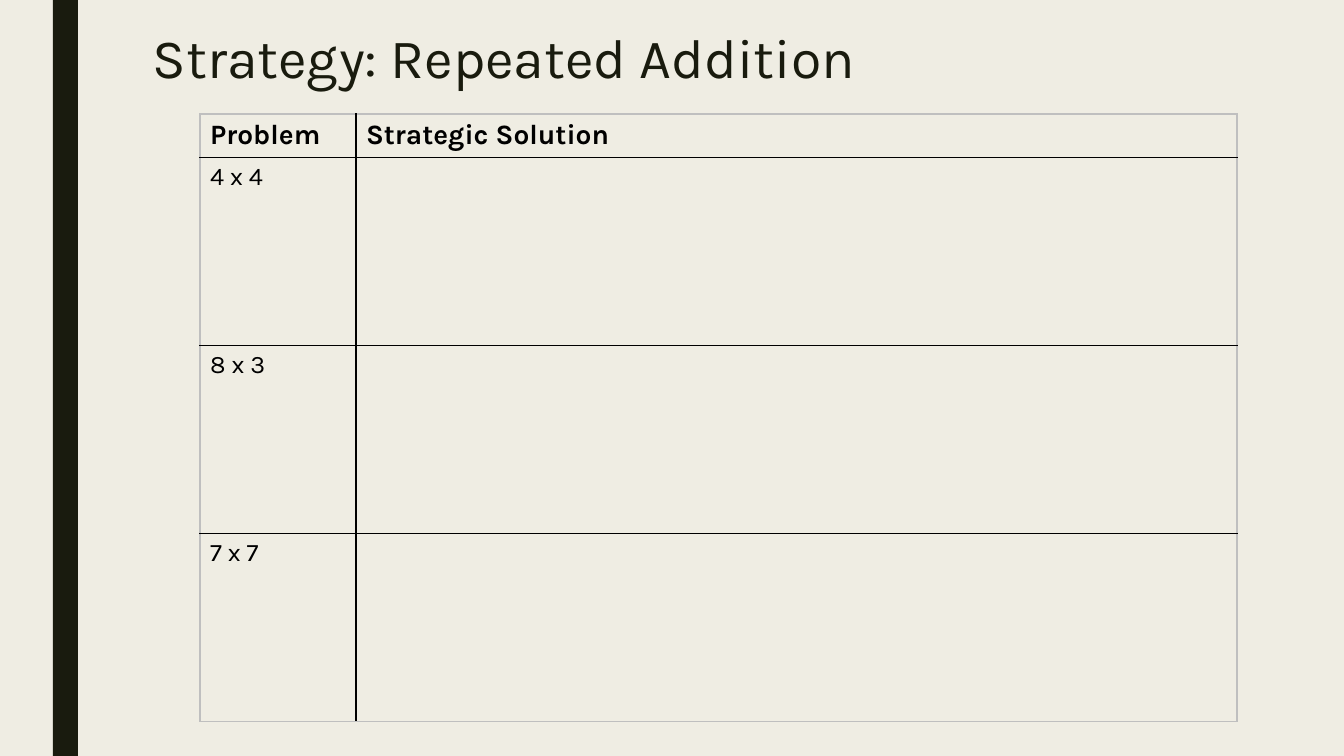
from lxml.etree import SubElement
from pptx import Presentation
from pptx.dml.color import RGBColor
from pptx.enum.shapes import MSO_SHAPE
from pptx.enum.text import MSO_ANCHOR
from pptx.oxml.ns import qn
from pptx.util import Pt

EMU_PER_PX = 914400 / 100.8
COLORS = {"paper": "EFEDE3", "ink": "191B0E", "black": "000000", "edge": "BFBFBF"}
PROBLEMS = ["4 x 4", "8 x 3", "7 x 7"]


def px(length):
    return round(length * EMU_PER_PX)


class SlideBuilder:
    font = "Karla"

    def __init__(self, deck):
        self.page = deck.slides.add_slide(deck.slide_layouts[6])
        self.paint(self.page.background.fill, "paper")

    def paint(self, fill, color):
        fill.solid()
        fill.fore_color.rgb = RGBColor.from_string(COLORS[color])

    def style(self, para, size, color, bold=False):
        for span in para.runs:
            span.font.name = self.font
            span.font.size = Pt(size)
            span.font.bold = bold
            span.font.color.rgb = RGBColor.from_string(COLORS[color])

    def bar(self, left, top, width, height, color):
        shape = self.page.shapes.add_shape(
            MSO_SHAPE.RECTANGLE, px(left), px(top), px(width), px(height))
        shape.shadow.inherit = False
        self.paint(shape.fill, color)
        shape.line.fill.background()

    def title(self, left, top, width, height, text, size):
        box = self.page.shapes.add_textbox(px(left), px(top), px(width), px(height))
        frame = box.text_frame
        frame.word_wrap = True
        frame.vertical_anchor = MSO_ANCHOR.MIDDLE
        frame.text = text
        para = frame.paragraphs[0]
        para.line_spacing = 0.89
        self.style(para, size, "ink")

    def border(self, cell, side, color):
        line = SubElement(cell._tc.get_or_add_tcPr(), qn(f"a:ln{side}"), w=str(Pt(1)))
        fill = SubElement(line, qn("a:solidFill"))
        SubElement(fill, qn("a:srgbClr"), val=COLORS[color])

    def table(self, left, top, widths, heights, rows):
        frame = self.page.shapes.add_table(
            len(heights), len(widths), px(left), px(top), px(sum(widths)), px(sum(heights)))
        table = frame.table
        table.first_row = False
        table.horz_banding = False
        for column, width in zip(table.columns, widths):
            column.width = px(width)
        for row, height in zip(table.rows, heights):
            row.height = px(height)
        last_row, last_column = len(heights) - 1, len(widths) - 1
        for i, texts in enumerate(rows):
            for j, text in enumerate(texts):
                cell = table.cell(i, j)
                cell.text = text
                self.style(cell.text_frame.paragraphs[0], 18 if i else 20, "black", bold=i == 0)
                outer = {"L": j == 0, "R": j == last_column, "T": i == 0, "B": i == last_row}
                for side, is_outer in outer.items():
                    self.border(cell, side, "edge" if is_outer else "black")
                cell.fill.background()


def main():
    deck = Presentation()
    deck.slide_width, deck.slide_height = px(1344), px(756)
    slide = SlideBuilder(deck)
    slide.bar(53, 0, 25, 756, "ink")
    slide.title(143, 23, 1058, 76, "Strategy: Repeated Addition", 39.6)
    rows = [["Problem", "Strategic Solution"]] + [[problem, ""] for problem in PROBLEMS]
    slide.table(200, 114, [156, 881], [43] + [188] * len(PROBLEMS), rows)
    deck.save("out.pptx")


if __name__ == "__main__":
    main()
